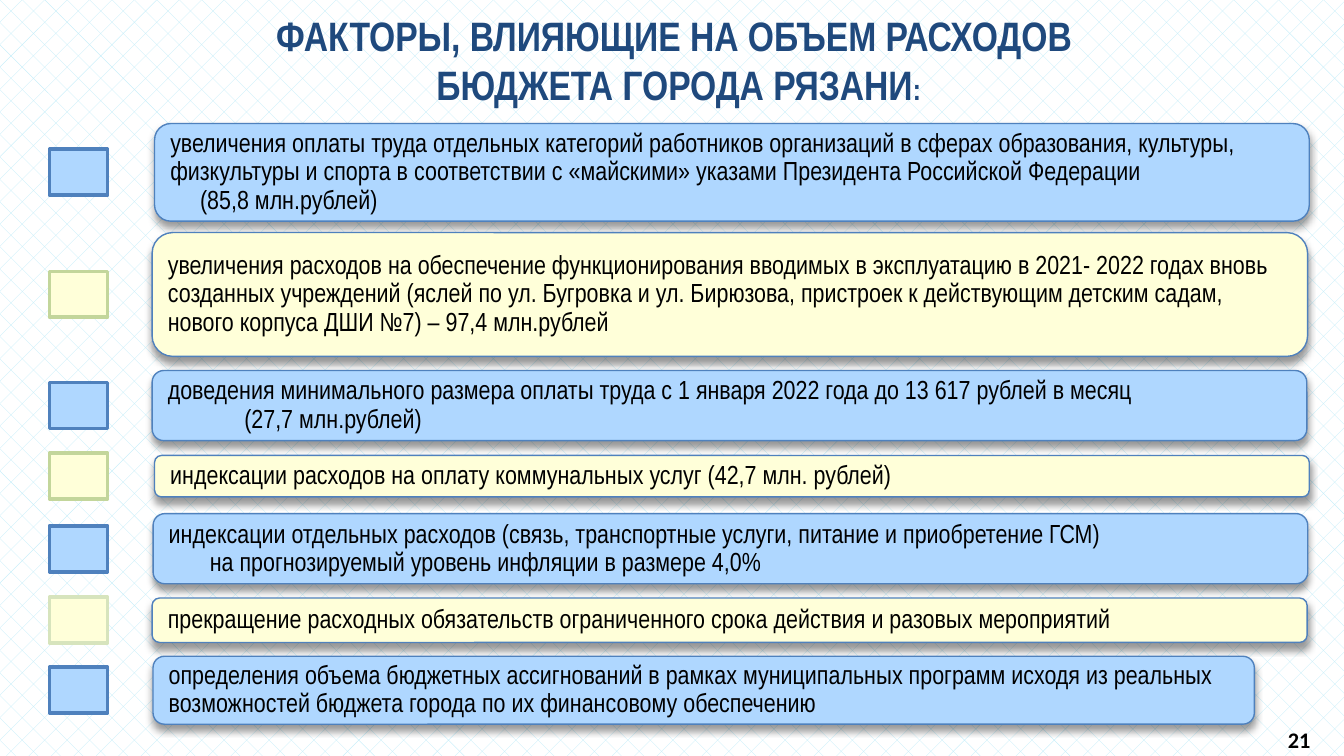
"""Build the slide on the factors behind the city budget's spending."""
from lxml.etree import SubElement
from pptx import Presentation
from pptx.dml.color import RGBColor
from pptx.enum.dml import MSO_PATTERN
from pptx.enum.shapes import MSO_SHAPE
from pptx.enum.text import MSO_ANCHOR, MSO_AUTO_SIZE, PP_ALIGN
from pptx.oxml.ns import qn
from pptx.util import Pt

COLORS = {
    "blue": "AFD7FF", "yellow": "FFFFD9", "border": "4F81BD",
    "green": "C3D69B", "pale": "D7E4BD", "title": "1F497D",
    "text": "000000", "pattern": "BDECF9", "back": "FFFFFF",
}
FONTS = {
    "title": {"name": "Arial Narrow", "size": Pt(22), "bold": True},
    "colon": {"name": "Arial Narrow", "size": Pt(16), "bold": True},
    "body": {"name": "Arial Narrow", "size": Pt(14), "bold": False},
    "number": {"name": "Calibri", "size": Pt(11.9), "bold": True},
}
TITLE = [
    [("ФАКТОРЫ, ВЛИЯЮЩИЕ НА ОБЪЕМ РАСХОДОВ ", "title")],
    [("БЮДЖЕТА ГОРОДА РЯЗАНИ", "title"), (":", "colon")],
]
FACTORS = [
    (82.8, 66.2, 618.6, 52.3, "border", [
        ("увеличения оплаты труда отдельных категорий работников организаций "
         "в сферах образования, культуры, физкультуры и спорта в соответствии "
         "с «майскими» указами Президента Российской Федерации", 0),
        ("(85,8 млн.рублей)", 16)]),
    (81.5, 124.6, 619, 66.3, "green", [
        ("увеличения расходов на обеспечение функционирования вводимых в "
         "эксплуатацию в 2021- 2022 годах вновь созданных учреждений (яслей "
         "по ул. Бугровка и ул. Бирюзова, пристроек к действующим детским "
         "садам, нового корпуса ДШИ №7) – 97,4 млн.рублей", 0)]),
    (81.5, 198.5, 618.6, 37.6, "border", [
        ("доведения минимального размера оплаты труда с 1 января 2022 года "
         "до 13 617 рублей в месяц", 0),
        ("(27,7 млн.рублей)", 41)]),
    (82.8, 244, 618.6, 22.2, "green", [
        ("индексации расходов на оплату коммунальных услуг "
         "(42,7 млн. рублей)", 0)]),
    (82, 275.2, 618.6, 37.6, "border", [
        ("индексации отдельных расходов (связь, транспортные услуги, питание "
         "и приобретение ГСМ)", 0),
        ("на прогнозируемый уровень инфляции в размере 4,0%", 22)]),
    (81.5, 320.4, 618.8, 23.8, "pale", [
        ("прекращение расходных обязательств ограниченного срока действия "
         "и разовых мероприятий", 0)]),
    (82, 351.6, 590, 36.4, "border", [
        ("определения объема бюджетных ассигнований в рамках муниципальных "
         "программ исходя из реальных возможностей бюджета города по их "
         "финансовому обеспечению", 0)]),
]


def rgb(key):
    return RGBColor.from_string(COLORS[key])


def apply(obj, values):
    for name, value in values.items():
        setattr(obj, name, value)


class Slide:
    def __init__(self, prs):
        self.s = prs.slides.add_slide(prs.slide_layouts[5])
        fill = self.s.background.fill
        fill.patterned()
        fill.pattern = MSO_PATTERN.DIAGONAL_BRICK
        fill.fore_color.rgb = rgb("pattern")
        fill.back_color.rgb = rgb("back")

    def frame(self, sp, side=0, anchor=MSO_ANCHOR.MIDDLE):
        tf = sp.text_frame
        apply(tf, {"word_wrap": True, "auto_size": MSO_AUTO_SIZE.NONE,
                   "vertical_anchor": anchor,
                   "margin_left": Pt(side), "margin_right": Pt(side),
                   "margin_top": 0, "margin_bottom": 0})
        return tf

    def paragraph(self, tf, i, runs, color, **values):
        p = tf.add_paragraph() if i else tf.paragraphs[0]
        apply(p, {"space_before": Pt(0), "space_after": Pt(0), **values})
        for text, font in runs:
            r = p.add_run()
            r.text = text
            apply(r.font, FONTS[font])
            r.font.color.rgb = rgb(color)
        return p

    def title(self, lines, left, top, width, height):
        sp = self.s.shapes.title
        apply(sp, {"left": Pt(left), "top": Pt(top),
                   "width": Pt(width), "height": Pt(height)})
        tf = self.frame(sp)
        for i, runs in enumerate(lines):
            self.paragraph(tf, i, runs, "title", alignment=PP_ALIGN.CENTER)

    def box(self, kind, left, top, width, height, fill, line, weight):
        sp = self.s.shapes.add_shape(
            kind, Pt(left), Pt(top), Pt(width), Pt(height))
        sp.shadow.inherit = False
        sp.fill.solid()
        sp.fill.fore_color.rgb = rgb(fill)
        sp.line.color.rgb = rgb(line)
        sp.line.width = Pt(weight)
        return sp

    def marker(self, middle, fill, line):
        self.box(MSO_SHAPE.RECTANGLE, 26.6, middle - 12.3, 31, 24.6,
                 fill, line, 2)

    def card(self, left, top, width, height, fill, lines):
        sp = self.box(MSO_SHAPE.ROUNDED_RECTANGLE, left, top, width, height,
                      fill, "border", 0.75)
        effects = sp._element.spPr.find(qn("a:effectLst"))
        shadow = SubElement(effects, qn("a:outerShdw"), blurRad=str(Pt(4)),
                            dist=str(Pt(3)), dir="5400000", rotWithShape="0")
        color = SubElement(shadow, qn("a:srgbClr"), val=COLORS["text"])
        SubElement(color, qn("a:alpha"), val="40000")
        tf = self.frame(sp, 8.4 - 0.29 * height / 6)
        for i, (text, indent) in enumerate(lines):
            p = self.paragraph(tf, i, [(text, "body")], "text",
                               alignment=PP_ALIGN.LEFT, line_spacing=0.9)
            pPr = p._p.get_or_add_pPr()
            pPr.set("marL", str(Pt(indent)))

    def number(self, text, left, top, width, height):
        sp = self.s.shapes.add_textbox(
            Pt(left), Pt(top), Pt(width), Pt(height))
        self.paragraph(self.frame(sp), 0, [(text, "number")], "text",
                       alignment=PP_ALIGN.CENTER)


def main():
    prs = Presentation()
    apply(prs, {"slide_width": Pt(720), "slide_height": Pt(405)})
    slide = Slide(prs)
    slide.title(TITLE, 39.6, 4, 648, 56)
    for i, (left, top, width, height, line, lines) in enumerate(FACTORS):
        fill = ("blue", "yellow")[i % 2]
        slide.marker(top + height / 2, fill, line)
        slide.card(left, top, width, height, fill, lines)
    slide.number("21", 672, 387, 48, 18)
    prs.save("out.pptx")


if __name__ == "__main__":
    main()
